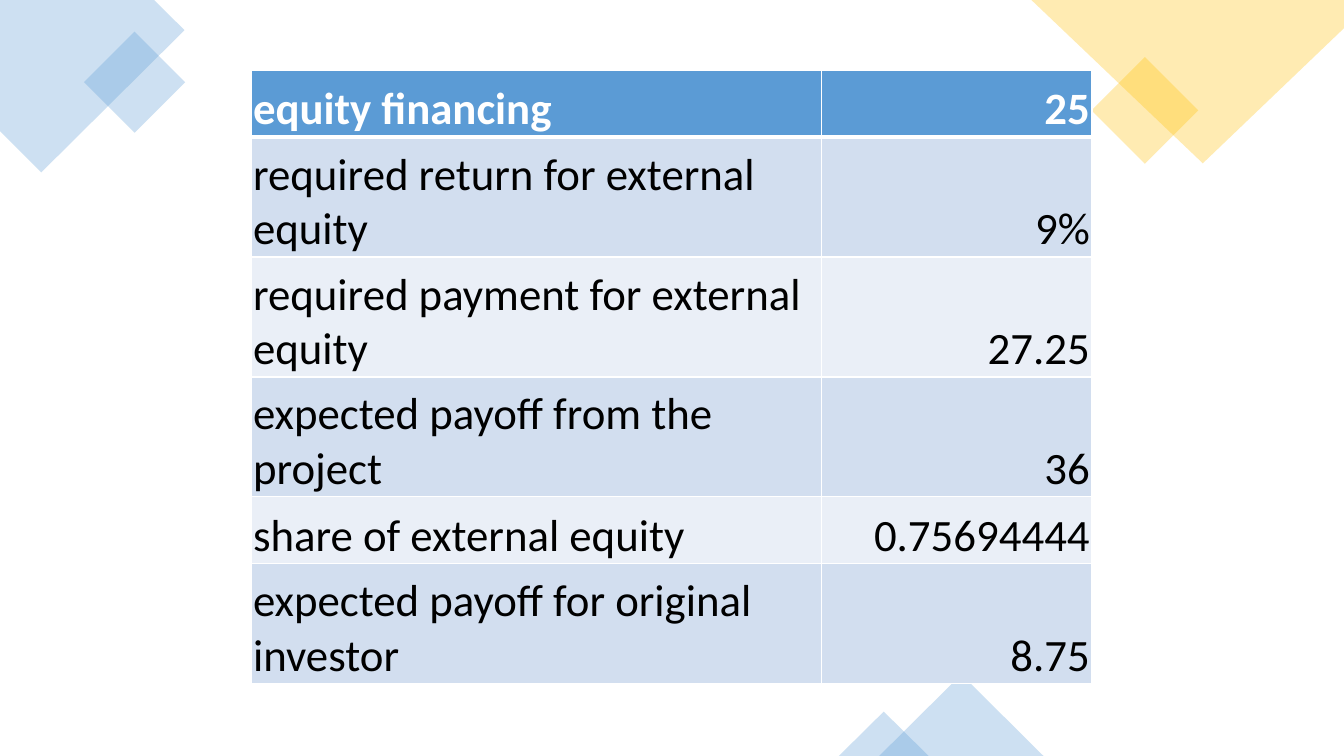
from lxml.etree import SubElement
from pptx import Presentation
from pptx.dml.color import RGBColor
from pptx.enum.shapes import MSO_SHAPE
from pptx.enum.text import MSO_ANCHOR, PP_ALIGN
from pptx.oxml.ns import qn
from pptx.util import Inches, Pt

BLUE = RGBColor(0x5B, 0x9B, 0xD5)
GOLD = RGBColor(0xFF, 0xC0, 0x00)
BAND_DARK = RGBColor(0xD2, 0xDE, 0xEF)
BAND_LIGHT = RGBColor(0xEA, 0xEF, 0xF7)
WHITE = RGBColor(0xFF, 0xFF, 0xFF)
BLACK = RGBColor(0x00, 0x00, 0x00)

ROWS = [
    ("equity financing", "25", 0.66),
    ("required return for external equity", "9%", 1.19),
    ("required payment for external equity", "27.25", 1.19),
    ("expected payoff from the project", "36", 1.19),
    ("share of external equity", "0.75694444", 0.66),
    ("expected payoff for original investor", "8.75", 1.19),
]
COLUMN_WIDTHS = (5.66, 2.68)


def write_text(text_frame, text, font="Calibri", size=32, color=BLACK, bold=False,
               align=PP_ALIGN.LEFT):
    paragraph = text_frame.paragraphs[0]
    paragraph.alignment = align
    run = paragraph.add_run()
    run.text = text
    run.font.name = font
    run.font.size = Pt(size)
    run.font.bold = bold
    run.font.color.rgb = color


def set_borders(cell, bottom_width):
    """Give the cell white edges of 1 point, with its own bottom width."""
    properties = cell._tc.get_or_add_tcPr()
    for edge, width in (("L", 1), ("R", 1), ("T", 1), ("B", bottom_width)):
        line = SubElement(properties, qn(f"a:ln{edge}"), w=str(Pt(width)))
        fill = SubElement(line, qn("a:solidFill"))
        SubElement(fill, qn("a:srgbClr"), val=str(WHITE))


class SlideBuilder:
    def __init__(self, slide, opacity):
        self.slide = slide
        self.opacity = opacity

    def tint(self, shape, color):
        """Fill the shape with a see-through colour, without line or shadow."""
        shape.shadow.inherit = False
        shape.line.fill.background()
        shape.fill.solid()
        shape.fill.fore_color.rgb = color
        color_element = shape._element.spPr.find(qn("a:solidFill"))[0]
        SubElement(color_element, qn("a:alpha"), val=str(self.opacity * 1000))

    def polygon(self, points, color):
        corners = [(Inches(x), Inches(y)) for x, y in points]
        builder = self.slide.shapes.build_freeform(*corners[0])
        builder.add_line_segments(corners[1:], close=True)
        self.tint(builder.convert_to_shape(), color)

    def preset(self, kind, left, top, width, height, color, rotation=0):
        shape = self.slide.shapes.add_shape(
            kind, Inches(left), Inches(top), Inches(width), Inches(height))
        shape.rotation = rotation
        self.tint(shape, color)

    def table(self, left, top, rows, column_widths):
        height = sum(row[-1] for row in rows)
        table = self.slide.shapes.add_table(
            len(rows), len(column_widths), Inches(left), Inches(top),
            Inches(sum(column_widths)), Inches(height)).table
        for column, width in zip(table.columns, column_widths):
            column.width = Inches(width)
        for index, (label, value, row_height) in enumerate(rows):
            table.rows[index].height = Inches(row_height)
            self.cell(table.cell(index, 0), label, index, PP_ALIGN.LEFT)
            self.cell(table.cell(index, 1), value, index, PP_ALIGN.RIGHT)

    def cell(self, cell, text, row_index, align):
        header = row_index == 0
        band = BAND_DARK if row_index % 2 else BAND_LIGHT
        cell.margin_left = cell.margin_right = cell.margin_top = Inches(0.02)
        cell.margin_bottom = 0
        cell.vertical_anchor = MSO_ANCHOR.BOTTOM
        set_borders(cell, bottom_width=3 if header else 1)
        cell.fill.solid()
        cell.fill.fore_color.rgb = BLUE if header else band
        write_text(cell.text_frame, text, color=WHITE if header else BLACK,
                   bold=header, align=align)


def main():
    presentation = Presentation()
    presentation.slide_width = Inches(13.33)
    presentation.slide_height = Inches(7.5)
    slide = presentation.slides.add_slide(presentation.slide_layouts[6])
    builder = SlideBuilder(slide, opacity=30)

    builder.polygon([(0, 0), (1.53, 0), (1.83, 0.3), (0.41, 1.71), (0, 1.3)], BLUE)
    builder.preset(MSO_SHAPE.RECTANGLE, 0.98, 0.46, 0.71, 0.71, BLUE, rotation=315)
    builder.preset(MSO_SHAPE.RECTANGLE, 10.98, 0.72, 0.75, 0.75, GOLD, rotation=315)
    builder.polygon([(10.23, 0), (13.33, 0), (13.33, 0.28), (11.93, 1.62)], GOLD)
    builder.preset(MSO_SHAPE.ISOSCELES_TRIANGLE, 8.72, 6.69, 1.63, 0.81, BLUE)
    builder.preset(MSO_SHAPE.ISOSCELES_TRIANGLE, 8.32, 7.06, 0.89, 0.44, BLUE)
    builder.table(2.49, 0.7, ROWS, COLUMN_WIDTHS)

    presentation.save("out.pptx")


if __name__ == "__main__":
    main()
